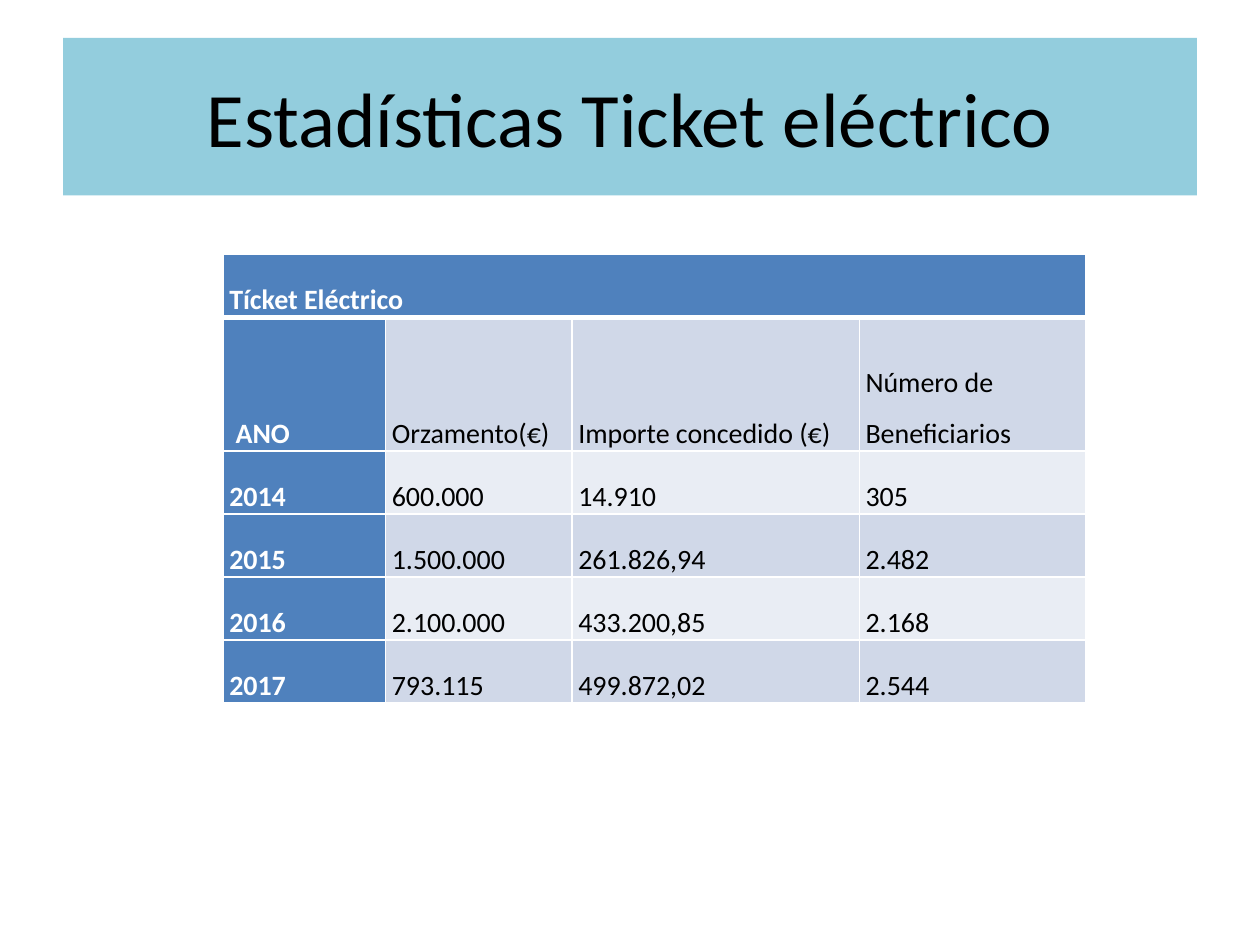
from lxml.etree import SubElement
from pptx import Presentation
from pptx.dml.color import RGBColor
from pptx.enum.text import MSO_ANCHOR, PP_ALIGN
from pptx.oxml.ns import qn
from pptx.util import Inches, Pt

TITLE = "Estadísticas Ticket eléctrico"
ROWS = [
    ["Tícket Eléctrico", "", "", ""],
    [" ANO", "Orzamento(€)", "Importe concedido (€)", "Número de\nBeneficiarios"],
    ["2014", "600.000", "14.910", "305"],
    ["2015", "1.500.000", "261.826,94", "2.482"],
    ["2016", "2.100.000", "433.200,85", "2.168"],
    ["2017", "793.115", "499.872,02", "2.544"],
]
COLUMN_WIDTHS = [1.29, 1.48, 2.28, 1.8]
ROW_HEIGHTS = [0.5, 1.06, 0.5, 0.5, 0.5, 0.5]
COLORS = {
    "banner": "93CDDD",
    "header": "4F81BD",
    "dark_band": "D0D8E8",
    "light_band": "E9EDF4",
    "white": "FFFFFF",
    "black": "000000",
}
FONT = "Calibri"


def set_fill(target, color):
    target.fill.solid()
    target.fill.fore_color.rgb = RGBColor.from_string(COLORS[color])


def add_run(paragraph, text, size, color, bold=False):
    run = paragraph.add_run()
    run.text = text
    run.font.name = FONT
    run.font.size = Pt(size)
    run.font.bold = bold
    run.font.color.rgb = RGBColor.from_string(COLORS[color])


def set_borders(cell, bottom_width):
    properties = cell._tc.get_or_add_tcPr()
    widths = {"a:lnL": 1, "a:lnR": 1, "a:lnT": 1, "a:lnB": bottom_width}
    for tag, width in widths.items():
        line = SubElement(properties, qn(tag), w=str(Pt(width)))
        fill = SubElement(line, qn("a:solidFill"))
        SubElement(fill, qn("a:srgbClr"), val=COLORS["white"])


def add_title(slide):
    title = slide.shapes.title
    title.left, title.top = Inches(0.5), Inches(0.3)
    title.width, title.height = Inches(9), Inches(1.25)
    set_fill(title, "banner")
    title.text_frame.vertical_anchor = MSO_ANCHOR.MIDDLE
    paragraph = title.text_frame.paragraphs[0]
    paragraph.alignment = PP_ALIGN.CENTER
    add_run(paragraph, TITLE, 44, "black")


def format_cell(cell, text, row, column):
    is_header = row == 0 or column == 0
    set_borders(cell, 3 if row == 0 else 1)
    band = "dark_band" if row % 2 else "light_band"
    set_fill(cell, "header" if is_header else band)
    cell.vertical_anchor = MSO_ANCHOR.BOTTOM
    cell.margin_left = cell.margin_right = Inches(0.05)
    cell.margin_top = cell.margin_bottom = 0
    if not text:
        return
    frame = cell.text_frame
    for index, line in enumerate(text.split("\n")):
        paragraph = frame.add_paragraph() if index else frame.paragraphs[0]
        paragraph.alignment = PP_ALIGN.JUSTIFY
        paragraph.line_spacing = 1.5
        add_run(paragraph, line, 16, "white" if is_header else "black", is_header)


def add_statistics_table(slide):
    table = slide.shapes.add_table(
        len(ROWS), len(COLUMN_WIDTHS), Inches(1.77), Inches(2.02),
        Inches(sum(COLUMN_WIDTHS)), Inches(sum(ROW_HEIGHTS)),
    ).table
    table.first_col = True
    for column, width in zip(table.columns, COLUMN_WIDTHS):
        column.width = Inches(width)
    for row, height in zip(table.rows, ROW_HEIGHTS):
        row.height = Inches(height)
    table.cell(0, 0).merge(table.cell(0, len(COLUMN_WIDTHS) - 1))
    for row, texts in enumerate(ROWS):
        for column, text in enumerate(texts):
            format_cell(table.cell(row, column), text, row, column)


def main():
    presentation = Presentation()
    presentation.slide_width, presentation.slide_height = Inches(10), Inches(7.5)
    slide = presentation.slides.add_slide(presentation.slide_layouts[5])
    add_title(slide)
    add_statistics_table(slide)
    presentation.save("out.pptx")


if __name__ == "__main__":
    main()
